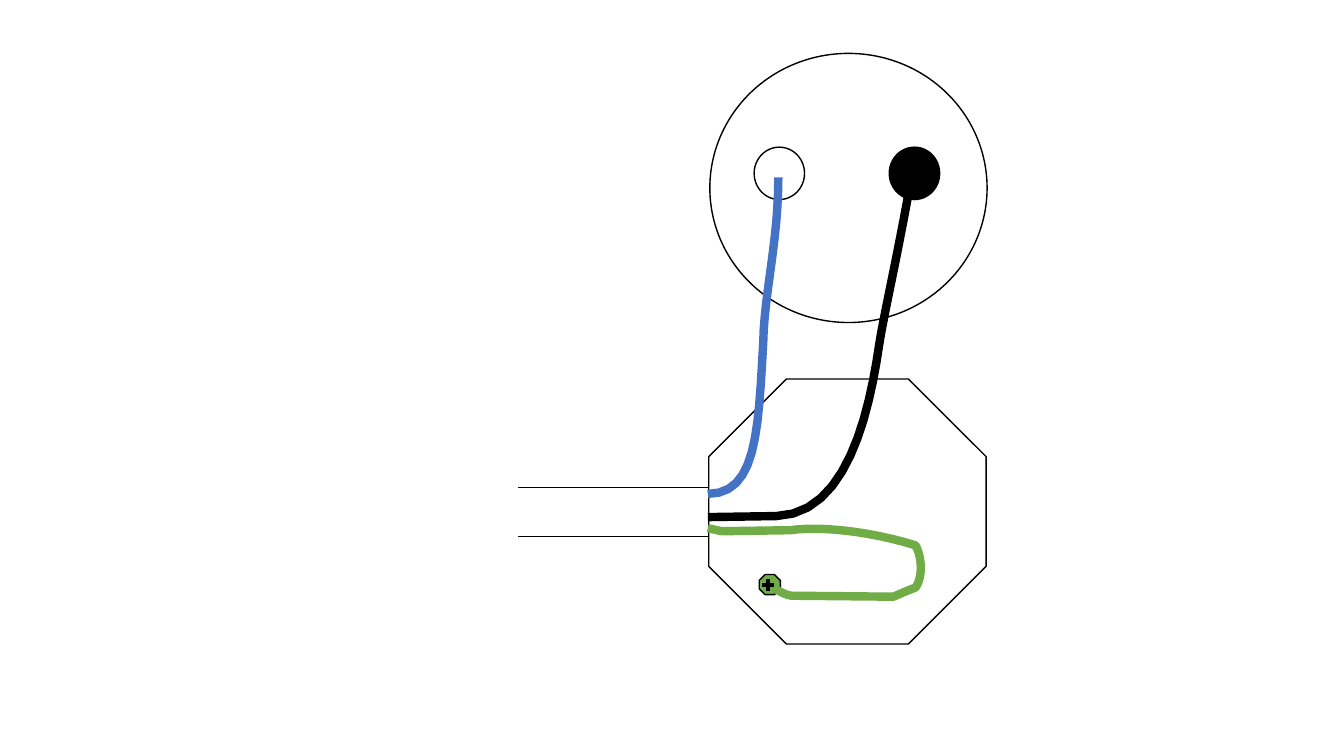
from dataclasses import dataclass

from lxml.etree import SubElement
from pptx import Presentation
from pptx.dml.color import RGBColor
from pptx.enum.shapes import MSO_CONNECTOR as LINE, MSO_SHAPE as SHAPE
from pptx.oxml.ns import qn
from pptx.util import Pt

PX = 9144
CURVE_STEPS = 12


@dataclass(frozen=True)
class Theme:
    black: str = "000000"
    white: str = "FFFFFF"
    blue: str = "4472C4"
    green: str = "70AD47"
    cable: float = 0.5
    outline: float = 1
    slot: float = 3
    wire: float = 6


def emu(*lengths):
    return [round(length * PX) for length in lengths]


def apply(target, formats):
    for name, value in formats.items():
        setattr(target, name, value)


def mix(a, b, t):
    return tuple(p + (q - p) * t for p, q in zip(a, b))


def bezier_point(controls, t):
    while len(controls) > 1:
        controls = [mix(a, b, t) for a, b in zip(controls, controls[1:])]
    return controls[0]


def trace(start, segments):
    points = [start]
    for segment in segments:
        controls = [points[-1], *segment]
        steps = 1 if len(segment) == 1 else CURVE_STEPS
        points += [bezier_point(controls, i / steps)
                   for i in range(1, steps + 1)]
    return points


class Diagram:
    def __init__(self, prs, theme):
        self.theme = theme
        self.s = prs.slides.add_slide(prs.slide_layouts[6])

    def stroke(self, sp, color, width):
        apply(sp.line.color, {"rgb": RGBColor.from_string(color)})
        apply(sp.line, {"width": Pt(width)})

    def fill(self, sp, color):
        sp.shadow.inherit = False
        if color:
            sp.fill.solid()
            apply(sp.fill.fore_color, {"rgb": RGBColor.from_string(color)})
        else:
            sp.fill.background()

    def shape(self, kind, x, y, w, h, color=None):
        sp = self.s.shapes.add_shape(kind, *emu(x, y, w, h))
        self.fill(sp, color)
        self.stroke(sp, self.theme.black, self.theme.outline)

    def line(self, x1, y1, x2, y2, width):
        sp = self.s.shapes.add_connector(LINE.STRAIGHT, *emu(x1, y1, x2, y2))
        self.stroke(sp, self.theme.black, width)
        SubElement(sp._element.spPr, qn("a:effectLst"))

    def wire(self, color, start, *segments):
        first, *rest = [emu(*point) for point in trace(start, segments)]
        builder = self.s.shapes.build_freeform(*first)
        builder.add_line_segments(rest, close=False)
        sp = builder.convert_to_shape()
        self.fill(sp, None)
        self.stroke(sp, color, self.theme.wire)

    def lamp_holder(self):
        self.shape(SHAPE.OVAL, 704, 53, 275, 267)
        for x, color in ((748, None), (882, self.theme.black)):
            self.shape(SHAPE.OVAL, x, 146, 50, 52, color)

    def junction_box(self, left):
        self.shape(SHAPE.OCTAGON, left, 376, 275, 263, self.theme.white)
        for y in (484, 532):
            self.line(left, y, 514, y, self.theme.cable)

    def ground_screw(self, x, y, arm):
        self.shape(SHAPE.OCTAGON, 753, 570, 21, 20, self.theme.green)
        for dx, dy in ((0, arm), (arm, 0)):
            self.line(x - dx, y - dy, x + dx, y + dy, self.theme.slot)

    def neutral_wire(self, entry):
        self.wire(self.theme.blue, (entry, 490),
                  [(750, 490), (752, 430), (757, 340)],
                  [(758, 290), (772, 240), (772, 176)])

    def hot_wire(self, entry):
        self.wire(self.theme.black, (entry, 513),
                  [(770, 512)],
                  [(840, 510), (862, 410), (872, 342)],
                  [(876, 315), (890, 255), (903, 181)])

    def ground_wire(self, entry):
        self.wire(self.theme.green, (entry, 524),
                  [(716, 527)],
                  [(784, 526)],
                  [(810, 522), (860, 526), (908, 541)],
                  [(914, 551), (916, 572), (908, 583)],
                  [(902, 585), (886, 592)],
                  [(785, 591)],
                  [(778, 590), (767, 583)])


def main():
    prs = Presentation()
    apply(prs, {"slide_width": 1333 * PX, "slide_height": 750 * PX})
    box_left = 703
    wire_entry = box_left - 1

    d = Diagram(prs, Theme())
    d.lamp_holder()
    d.junction_box(box_left)
    d.ground_screw(762, 580, arm=6)
    for draw_wire in (d.neutral_wire, d.hot_wire, d.ground_wire):
        draw_wire(wire_entry)

    prs.save("out.pptx")


if __name__ == "__main__":
    main()
